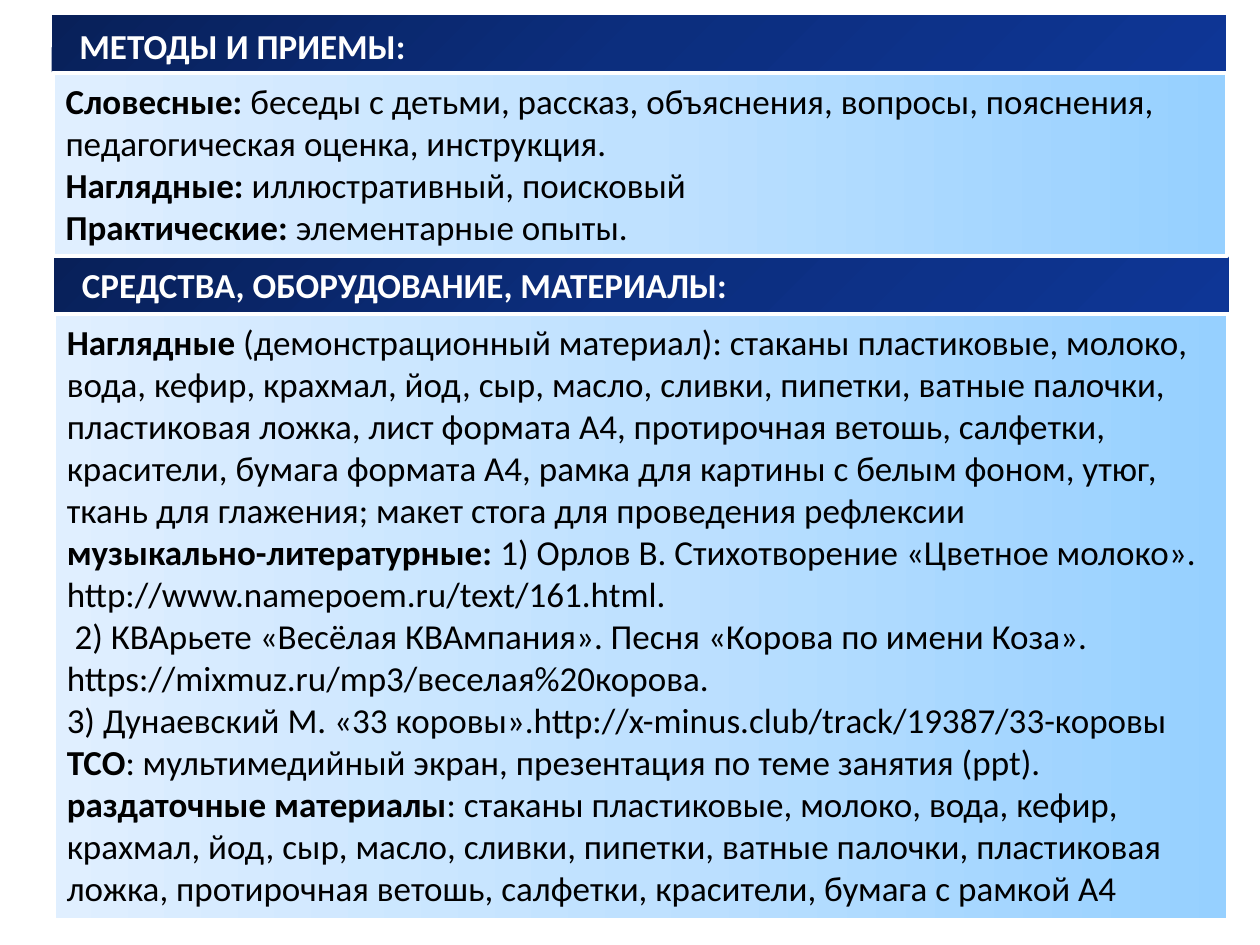
from copy import deepcopy
from dataclasses import dataclass

from lxml.etree import SubElement
from pptx import Presentation
from pptx.dml.color import RGBColor as RGB
from pptx.enum.text import MSO_ANCHOR as Anchor, MSO_AUTO_SIZE as AutoSize, PP_ALIGN as Align
from pptx.oxml.ns import qn
from pptx.util import Inches, Pt


@dataclass(frozen=True)
class Theme:
    font: str = "Calibri"
    size: int = 20
    light_text: str = "FFFFFF"
    dark_text: str = "000000"
    border: str = "FFFFFF"
    border_width: float = 2.25
    heading_colors: tuple = ("082059", "0C2E7E", "0E3696")
    panel_colors: tuple = ("96D0FF", "BFE1FF", "E0EFFF")


class SlideBuilder:
    """Holds the theme and the slide being filled."""

    def __init__(self, slide, theme):
        self.slide, self.theme = slide, theme
        self.places = {place.placeholder_format.idx: place for place in slide.placeholders}

    def gradient(self, box, colors, angle):
        """Three even stops; the angle runs counter-clockwise."""
        box.fill.gradient()
        box.fill.gradient_angle = angle
        first = box.element.spPr.find(".//" + qn("a:gs"))
        first.addnext(deepcopy(first))
        for stop, color, position in zip(box.fill.gradient_stops, colors, (0, 0.5, 1)):
            stop.color.rgb = RGB.from_string(color)
            stop.position = position

    def box(self, idx, left, top, height):
        """Fixed size, so that the panels keep room below their last line."""
        box = self.places.pop(idx)
        place = {"left": left, "top": top, "width": 9.32, "height": height}
        for name, value in place.items():
            setattr(box, name, Inches(value))
        frame_format = {"word_wrap": True, "vertical_anchor": Anchor.TOP,
                        "auto_size": AutoSize.NONE}
        for name, value in frame_format.items():
            setattr(box.text_frame, name, value)
        return box

    def paragraph(self, para, parts, color, indent=0, **para_format):
        """Parts are (text, bold) pairs."""
        properties = para._p.get_or_add_pPr()
        properties.set("marL", "0")
        properties.set("indent", str(Inches(indent)))
        SubElement(properties, qn("a:buNone"))
        for name, value in {"space_before": Pt(0), **para_format}.items():
            setattr(para, name, value)
        for text, bold in parts:
            span = para.add_run()
            span.text = text
            font_format = {"name": self.theme.font, "size": Pt(self.theme.size), "bold": bold}
            for name, value in font_format.items():
                setattr(span.font, name, value)
            span.font.color.rgb = RGB.from_string(color)

    def heading(self, idx, left, top, text):
        box = self.box(idx, left, top, 0.46)
        self.gradient(box, self.theme.heading_colors, 315)
        self.paragraph(box.text_frame.paragraphs[0], [(text, True)], self.theme.light_text,
                       indent=0.12, alignment=Align.JUSTIFY, line_spacing=1.07,
                       space_after=Pt(8))

    def panel(self, idx, left, top, height, items):
        """Items are (bold label, plain text) pairs."""
        box = self.box(idx, left, top, height)
        self.gradient(box, self.theme.panel_colors, 180)
        box.line.color.rgb = RGB.from_string(self.theme.border)
        box.line.width = Pt(self.theme.border_width)
        frame = box.text_frame
        for number, (label, text) in enumerate(items):
            para = frame.add_paragraph() if number else frame.paragraphs[0]
            parts = [(label, True), (text, False)] if label else [(text, False)]
            self.paragraph(para, parts, self.theme.dark_text, alignment=Align.LEFT,
                           line_spacing=1.0)

    def remove_unused(self):
        for place in self.places.values():
            place.element.getparent().remove(place.element)


METHODS = [
    ("Словесные: ", "беседы с детьми, рассказ, объяснения, вопросы, пояснения, "
     "педагогическая оценка, инструкция."),
    ("Наглядные: ", "иллюстративный, поисковый"),
    ("Практические: ", "элементарные опыты."),
]
MATERIALS = [
    ("Наглядные", " (демонстрационный материал): стаканы пластиковые, молоко, вода, кефир, "
     "крахмал, йод, сыр, масло, сливки, пипетки, ватные палочки, пластиковая ложка, "
     "лист формата А4, протирочная ветошь, салфетки, красители, бумага формата А4, "
     "рамка для картины с белым фоном, утюг, ткань для глажения; "
     "макет стога для проведения рефлексии"),
    ("музыкально-литературные: ", "1) Орлов В. Стихотворение «Цветное молоко». "
     "http://www.namepoem.ru/text/161.html."),
    ("", " 2) КВАрьете «Весёлая КВАмпания». Песня «Корова по имени Коза». "
     "https://mixmuz.ru/mp3/веселая%20корова."),
    ("", "3) Дунаевский М. «33 коровы».http://x-minus.club/track/19387/33-коровы"),
    ("ТСО", ": мультимедийный экран, презентация по теме занятия (ppt)."),
    ("раздаточные материалы", ": стаканы пластиковые, молоко, вода, кефир, крахмал, йод, "
     "сыр, масло, сливки, пипетки, ватные палочки, пластиковая ложка, протирочная ветошь, "
     "салфетки, красители, бумага с рамкой А4"),
]


def main():
    deck = Presentation()
    deck.slide_width, deck.slide_height = Inches(10), Inches(7.5)
    comparison = deck.slide_layouts[4]
    page = SlideBuilder(deck.slides.add_slide(comparison), Theme())
    page.heading(0, 0.41, 0.12, "МЕТОДЫ И ПРИЕМЫ:")
    page.panel(2, 0.42, 0.58, 1.45, METHODS)
    page.heading(1, 0.43, 2.02, "СРЕДСТВА, ОБОРУДОВАНИЕ, МАТЕРИАЛЫ:")
    page.panel(4, 0.43, 2.49, 4.81, MATERIALS)
    page.remove_unused()
    deck.save("out.pptx")


if __name__ == "__main__":
    main()
